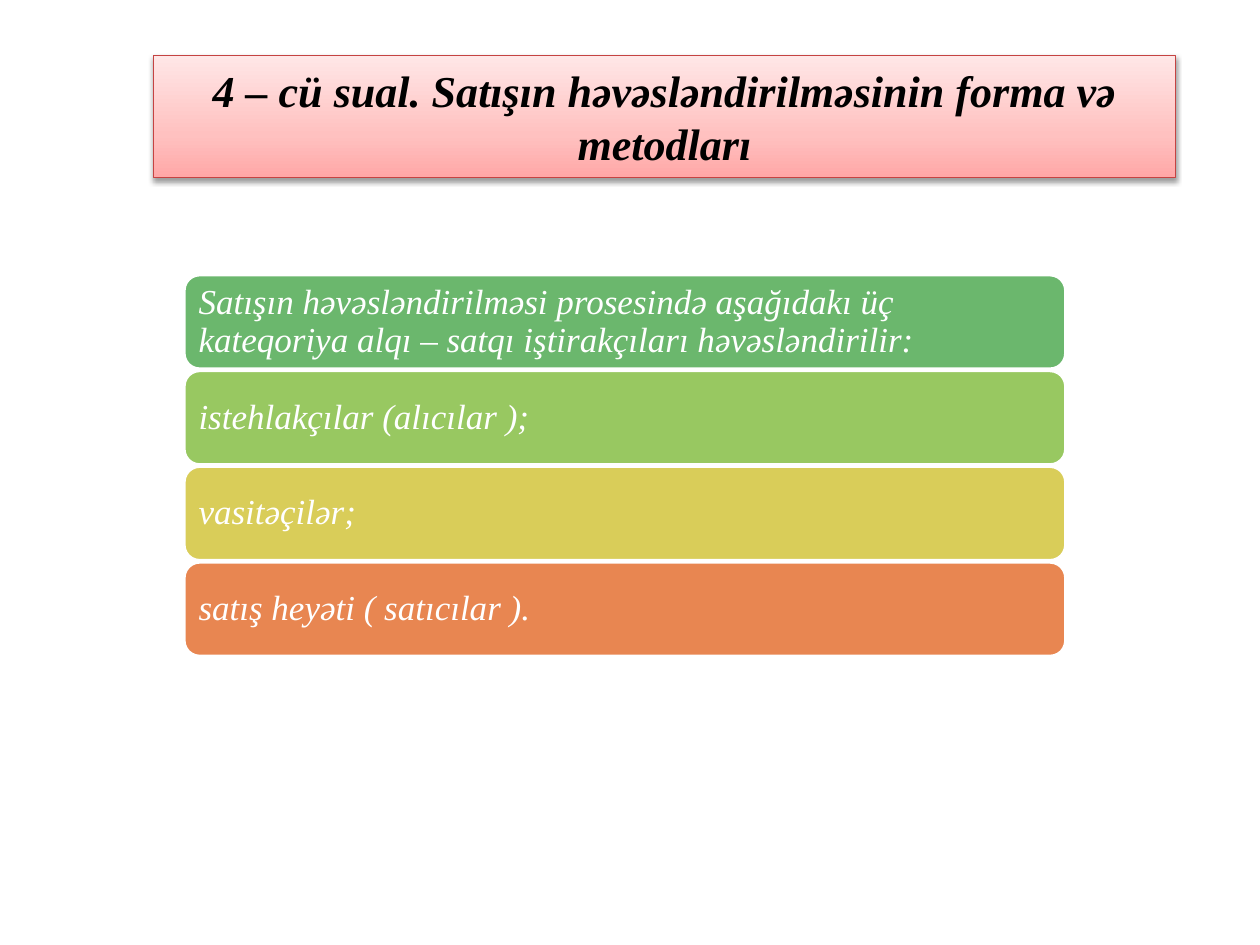
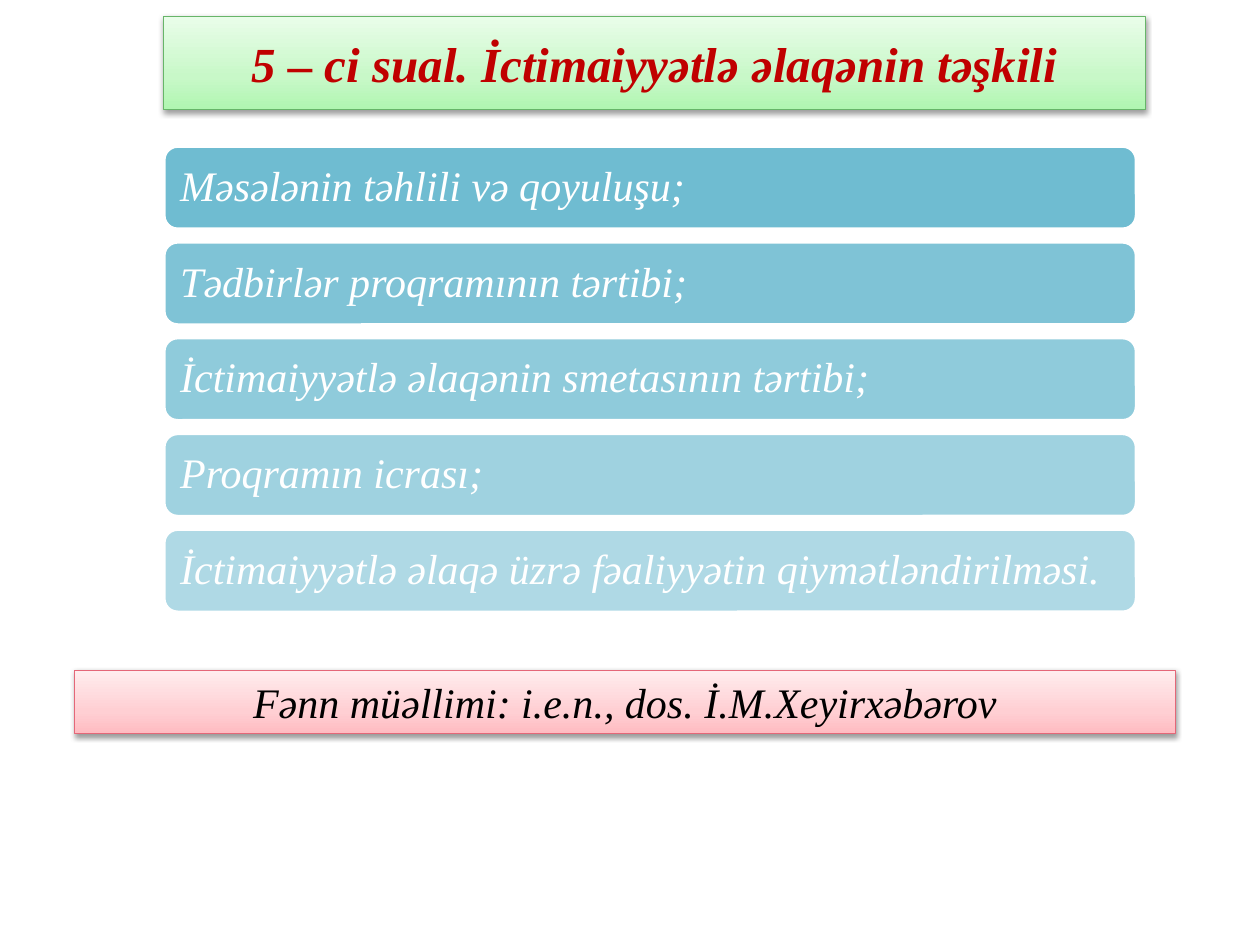
import pptx
import pptx.util
from pptx.dml.color import RGBColor
from pptx.enum.shapes import MSO_SHAPE
from pptx.enum.text import MSO_ANCHOR, MSO_AUTO_SIZE, PP_ALIGN
from pptx.oxml import parse_xml
from pptx.oxml.ns import nsdecls, qn
from pptx.util import Inches

FONT = "Times New Roman"
WHITE = RGBColor(0xFF, 0xFF, 0xFF)
BLACK = RGBColor(0x00, 0x00, 0x00)
DARK_RED = RGBColor(0xC0, 0x00, 0x00)
GREEN = RGBColor(0x6B, 0xB7, 0x6D)
LIME = RGBColor(0x98, 0xC8, 0x61)
YELLOW = RGBColor(0xD9, 0xCD, 0x59)
ORANGE = RGBColor(0xE8, 0x86, 0x51)
BLUE = RGBColor(0x60, 0xB5, 0xCC)
RED_LINE = RGBColor(0xC5, 0x43, 0x42)
RED_SHADES = [RGBColor(0xFF, 0xA7, 0xA7), RGBColor(0xFF, 0xC1, 0xC0), RGBColor(0xFF, 0xE7, 0xE7)]
GREEN_LINE = RGBColor(0x67, 0xB5, 0x69)
GREEN_SHADES = [RGBColor(0xB0, 0xF6, 0xB1), RGBColor(0xC8, 0xF8, 0xC8), RGBColor(0xE9, 0xFD, 0xE9)]
PINK_LINE = RGBColor(0xE4, 0x67, 0x78)
PINK_SHADES = [RGBColor(0xFF, 0xBC, 0xC2), RGBColor(0xFF, 0xCF, 0xD3), RGBColor(0xFF, 0xED, 0xEE)]
SHADE_POSITIONS = [0, 35, 100]
BAR_STEP = 0.76


def write_text(shape, text, size, color, bold=False, align=PP_ALIGN.CENTER, spacing=1.0, inset=None):
    """Put one italic paragraph into a shape."""
    frame = shape.text_frame
    frame.word_wrap = True
    frame.auto_size = MSO_AUTO_SIZE.NONE
    frame.vertical_anchor = MSO_ANCHOR.MIDDLE
    if inset is not None:
        frame.margin_left = frame.margin_right = Inches(inset)
        frame.margin_top = frame.margin_bottom = Inches(inset)
    paragraph = frame.paragraphs[0]
    paragraph.alignment = align
    paragraph.line_spacing = spacing
    run = paragraph.add_run()
    run.text = text
    run.font.name = FONT
    run.font.size = pptx.util.Pt(size)
    run.font.bold = bold
    run.font.italic = True
    run.font.color.rgb = color


def style_banner(shape, shades, line_color):
    """Give a shape an upward gradient, a thin outline and a soft shadow."""
    shape.fill.gradient()
    shape.fill.gradient_angle = 90
    properties = shape._element.spPr
    stops = properties.find(qn("a:gradFill")).find(qn("a:gsLst"))
    for stop in list(stops):
        stops.remove(stop)
    for position, shade in zip(SHADE_POSITIONS, shades):
        stops.append(parse_xml(
            f'<a:gs {nsdecls("a")} pos="{position * 1000}"><a:srgbClr val="{shade}"/></a:gs>'))
    shape.line.color.rgb = line_color
    shape.line.width = pptx.util.Pt(0.75)
    shape.shadow.inherit = False
    properties.find(qn("a:effectLst")).append(parse_xml(
        f'<a:outerShdw {nsdecls("a")} blurRad="40000" dist="20000" dir="5400000" rotWithShape="0">'
        '<a:srgbClr val="000000"><a:alpha val="38000"/></a:srgbClr></a:outerShdw>'))


def add_titled_slide(presentation, title, box, shades, line_color, **text_format):
    """Add a title-only slide whose title is a gradient banner."""
    slide = presentation.slides.add_slide(presentation.slide_layouts[5])
    shape = slide.shapes.title
    shape.left, shape.top, shape.width, shape.height = map(Inches, box)
    style_banner(shape, shades, line_color)
    write_text(shape, title, bold=True, **text_format)
    return slide


def add_banner(slide, text, box, shades, line_color, **text_format):
    """Add a gradient banner with centred text."""
    shape = slide.shapes.add_shape(MSO_SHAPE.RECTANGLE, *map(Inches, box))
    style_banner(shape, shades, line_color)
    write_text(shape, text, **text_format)


def add_bars(slide, bars, left, top, width, height, size, inset):
    """Stack rounded bars given as text, colour and opacity in percent."""
    for index, (text, color, opacity) in enumerate(bars):
        shape = slide.shapes.add_shape(
            MSO_SHAPE.ROUNDED_RECTANGLE, Inches(left), Inches(top + index * BAR_STEP),
            Inches(width), Inches(height))
        shape.fill.solid()
        shape.fill.fore_color.rgb = color
        if opacity < 100:
            fill_color = shape._element.spPr.find(qn("a:solidFill")).find(qn("a:srgbClr"))
            fill_color.append(parse_xml(f'<a:alpha {nsdecls("a")} val="{opacity * 1000}"/>'))
        shape.line.color.rgb = WHITE
        shape.line.width = pptx.util.Pt(2)
        shape.shadow.inherit = False
        write_text(shape, text, size=size, color=WHITE, align=PP_ALIGN.LEFT,
                   spacing=0.9, inset=inset)


def main():
    """Build both slides and save the presentation."""
    presentation = pptx.Presentation()
    presentation.slide_width = Inches(10)
    presentation.slide_height = Inches(7.5)

    slide = add_titled_slide(
        presentation, "4 – cü sual. Satışın həvəsləndirilməsinin forma və metodları",
        (1.22, 0.44, 8.11, 0.97), RED_SHADES, RED_LINE, size=25.2, color=BLACK)
    participants = [
        ("Satışın həvəsləndirilməsi prosesində aşağıdakı üç kateqoriya "
         "alqı – satqı iştirakçıları həvəsləndirilir:", GREEN, 100),
        ("istehlakçılar (alıcılar );", LIME, 100),
        ("vasitəçilər;", YELLOW, 100),
        ("satış heyəti ( satıcılar ).", ORANGE, 100),
    ]
    add_bars(slide, participants, 1.46, 2.18, 7, 0.75, size=20, inset=0.08)

    slide = add_titled_slide(
        presentation, "5 – ci sual. İctimaiyyətlə əlaqənin təşkili",
        (1.3, 0.13, 7.79, 0.74), GREEN_SHADES, GREEN_LINE, size=28, color=DARK_RED)
    stages = [
        "Məsələnin təhlili və qoyuluşu;",
        "Tədbirlər proqramının tərtibi;",
        "İctimaiyyətlə əlaqənin smetasının tərtibi;",
        "Proqramın icrası;",
        "İctimaiyyətlə əlaqə üzrə fəaliyyətin qiymətləndirilməsi.",
    ]
    bars = [(stage, BLUE, 90 - 10 * index) for index, stage in enumerate(stages)]
    add_bars(slide, bars, 1.3, 1.16, 7.72, 0.66, size=24, inset=0.1)
    add_banner(slide, "Fənn müəllimi: i.e.n., dos. İ.M.Xeyirxəbərov",
               (0.59, 5.32, 8.74, 0.5), PINK_SHADES, PINK_LINE, size=24, color=BLACK)

    presentation.save("out.pptx")


if __name__ == "__main__":
    main()
